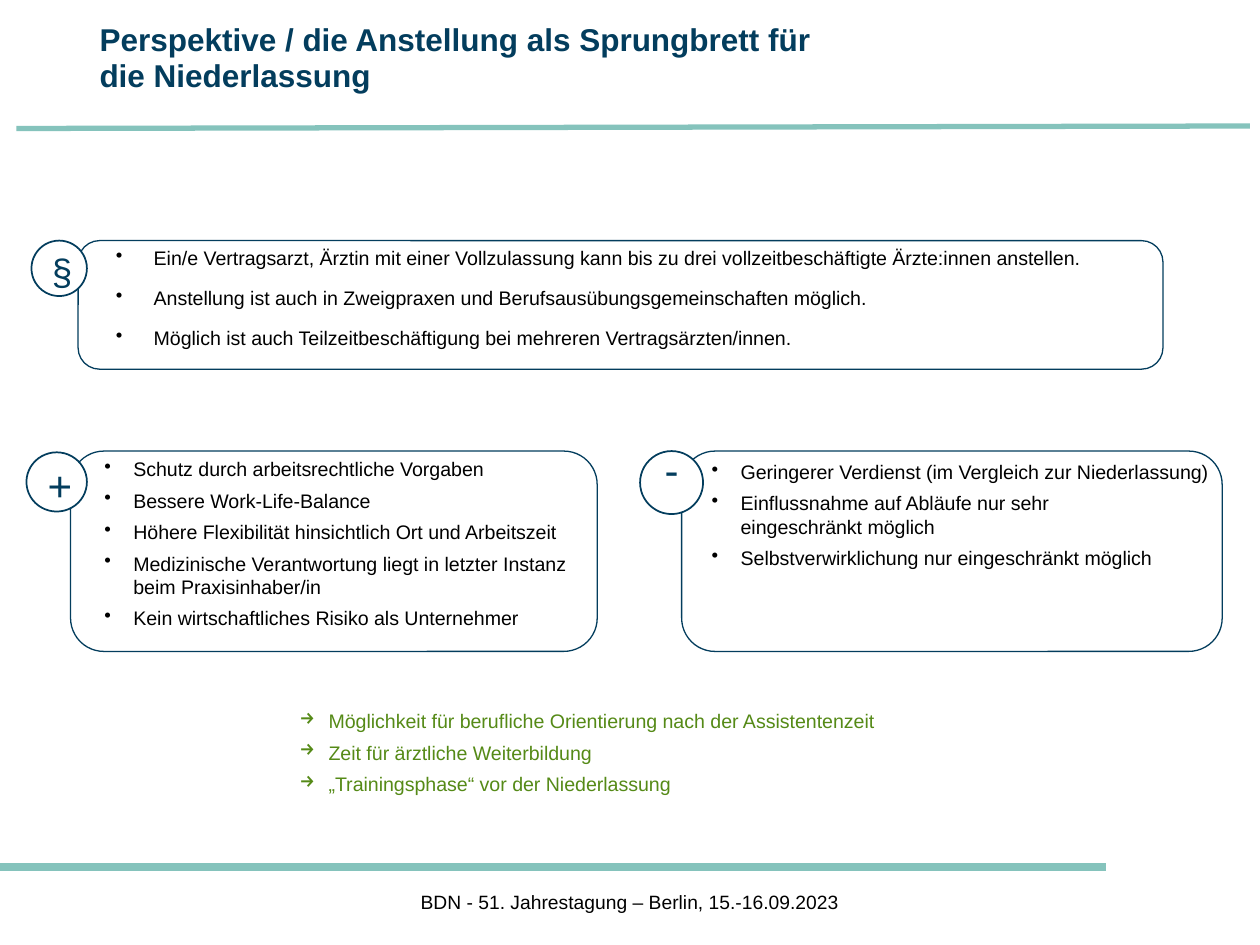
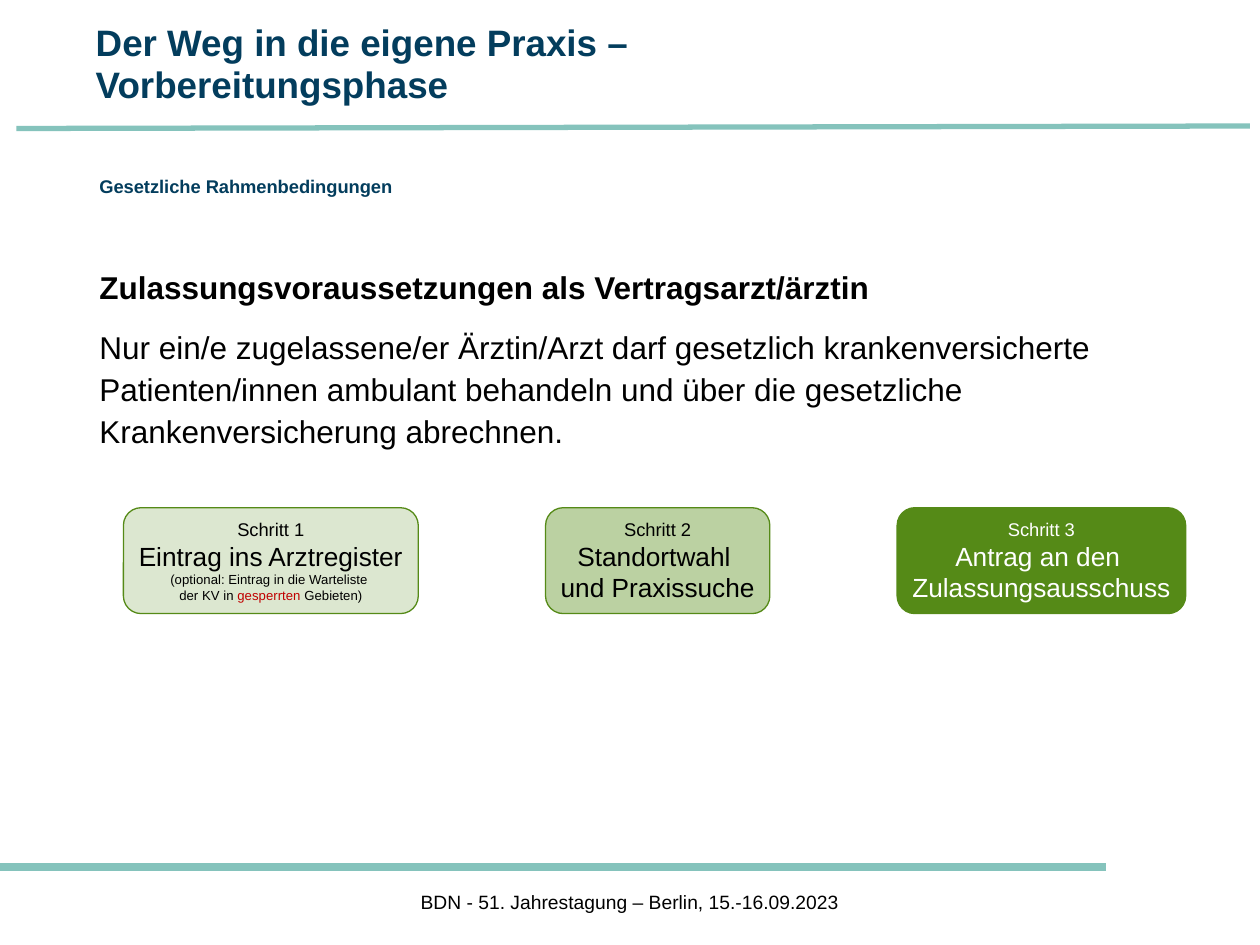
from copy import deepcopy
from dataclasses import dataclass
from typing import NamedTuple

from lxml import etree
from pptx import Presentation, util as u
from pptx.dml.color import RGBColor
from pptx.enum import shapes, text
from pptx.oxml.ns import qn

UNIT = u.Inches(0.1)  # grid of 100 columns by 75 rows
COLS, ROWS = 100, 75
FACE = "Arial"
NAVY, TEAL, GREEN, SAGE = "033D5D", "85C3BC", "558A17", "BBD1A2"
BLACK, WHITE, RED = "000000", "FFFFFF", "C00000"
FOOTER = "BDN - 51. Jahrestagung – Berlin, 15.-16.09.2023"
SMALL = 11.2
KIND = shapes.MSO_SHAPE
MID = text.MSO_ANCHOR.MIDDLE
CENTER = text.PP_ALIGN.CENTER


class Box(NamedTuple):
    """Left, top, width and height in grid units."""
    col: float
    row: float
    cols: float
    rows: float

    def emu(self) -> list[int]:
        return [int(n * UNIT) for n in self]


class Style(NamedTuple):
    size: float
    color: str = BLACK
    bold: bool = False


class Paras(NamedTuple):
    """Paragraph spacing in points, bullet sign and indents in inches."""
    before: float = 0
    after: float = 0
    lines: float = 1.0
    sign: str = ""
    left: float = 0
    hang: float = 0


class Piece(NamedTuple):
    words: str
    style: Style


@dataclass
class Card:
    """An outlined list with a round badge on its corner."""
    frame: Box
    body: Box
    badge: Box
    mark: str
    size: float
    items: list[str]
    paras: Paras
    tight: bool = False
    turn: int = 0


@dataclass
class Step:
    cols: float
    fill: str
    alpha: int
    lines: list[list[Piece]]


LAW = Paras(5, 4.5, sign="•", left=0.59, hang=0.3)
LIST = Paras(4.5, sign="•", left=0.46, hang=0.23)
ARROWS = Paras(4.5, sign="→", left=0.23, hang=0.23)

CARDS = [
    Card(Box(6.2, 19.1, 86.1, 10.2), Box(5.6, 19.1, 87, 11.2),
         Box(2.5, 19.1, 4.4, 4.4), "§", 21, [
        "Ein/e Vertragsarzt, Ärztin mit einer Vollzulassung kann bis zu drei "
        "vollzeitbeschäftigte Ärzte:innen anstellen.",
        "Anstellung ist auch in Zweigpraxen und Berufsausübungsgemeinschaften möglich.",
        "Möglich ist auch Teilzeitbeschäftigung bei mehreren Vertragsärzten/innen.",
    ], LAW, tight=True),
    Card(Box(5.6, 35.8, 41.8, 15.9), Box(5, 35.8, 44.9, 15.4),
         Box(2.1, 35.9, 4.8, 4.7), "+", 24, [
        "Schutz durch arbeitsrechtliche Vorgaben",
        "Bessere Work-Life-Balance",
        "Höhere Flexibilität hinsichtlich Ort und Arbeitszeit",
        "Medizinische Verantwortung liegt in letzter Instanz \nbeim Praxisinhaber/in",
        "Kein wirtschaftliches Risiko als Unternehmer",
    ], LIST),
    Card(Box(54.1, 35.8, 42.9, 15.9), Box(53.2, 36, 44.9, 10.4),
         Box(50.8, 35.8, 5, 5), "-", 24, [
        "Geringerer Verdienst (im Vergleich zur Niederlassung)",
        "Einflussnahme auf Abläufe nur sehr \neingeschränkt möglich",
        "Selbstverwirklichung nur eingeschränkt möglich",
    ], LIST, turn=180),
]

GAINS = [
    "Möglichkeit für berufliche Orientierung nach der Assistentenzeit",
    "Zeit für ärztliche Weiterbildung",
    "„Trainingsphase“ vor der Niederlassung",
]

NOTE = Style(7.5)
HEAD, MAIN = Style(10.5), Style(15)
STEPS = [
    Step(23.4, SAGE, 50, [
        [Piece("Schritt 1", HEAD)],
        [Piece("Eintrag ins Arztregister", MAIN)],
        [Piece("(optional: Eintrag in die Warteliste ", NOTE)],
        [Piece("der KV in ", NOTE), Piece("gesperrten", Style(7.5, RED)),
         Piece(" Gebieten)", NOTE)],
    ]),
    Step(17.8, SAGE, 100, [
        [Piece("Schritt 2", HEAD)],
        [Piece("Standortwahl ", MAIN)],
        [Piece("und Praxissuche", MAIN)],
    ]),
    Step(22.9, GREEN, 100, [
        [Piece("Schritt 3", Style(10.5, WHITE))],
        [Piece("Antrag an den ", Style(15, WHITE))],
        [Piece("Zulassungsausschuss", Style(15, WHITE))],
    ]),
]


def rgb(code: str) -> RGBColor:
    return RGBColor.from_string(code)


def ink(run, style: Style) -> None:
    font = run.font
    font.name, font.size, font.bold = FACE, u.Pt(style.size), style.bold
    font.color.rgb = rgb(style.color)


def match_breaks(para) -> None:
    """Give each line break the size of the run before it."""
    for br in para._p.findall(qn("a:br")):
        br.append(deepcopy(br.getprevious().find(qn("a:rPr"))))


def fit(frame, tight: bool = False) -> None:
    side, top = (0.07, 0.04) if tight else (0.1, 0.05)
    frame.margin_left = frame.margin_right = u.Inches(side)
    frame.margin_top = frame.margin_bottom = u.Inches(top)
    frame.word_wrap = True


def write(frame, items: list[str], styles: list[Style], paras: Paras = Paras()) -> None:
    """Fill a text frame, one paragraph for each item."""
    for i, (item, style) in enumerate(zip(items, styles)):
        para = frame.add_paragraph() if i else frame.paragraphs[0]
        para.text = item
        if paras.sign:
            props = para._p.get_or_add_pPr()
            props.set("marL", str(u.Inches(paras.left)))
            props.set("indent", str(-u.Inches(paras.hang)))
            etree.SubElement(props, qn("a:buChar")).set("char", paras.sign)
        para.space_before = u.Pt(paras.before if i else 0)
        para.space_after = u.Pt(paras.after)
        para.line_spacing = paras.lines
        for run in para.runs:
            ink(run, style)
        match_breaks(para)


def add_text(parent, box: Box, items: list[str], styles: list[Style],
             paras: Paras = Paras(), tight: bool = False) -> None:
    frame = parent.add_textbox(*box.emu()).text_frame
    fit(frame, tight)
    write(frame, items, styles, paras)


def add_form(parent, kind, box: Box, line: str, width: float, fill: str = ""):
    form = parent.add_shape(kind, *box.emu())
    form.shadow.inherit = False
    form.line.color.rgb, form.line.width = rgb(line), u.Pt(width)
    if fill:
        form.fill.solid()
        form.fill.fore_color.rgb = rgb(fill)
    else:
        form.fill.background()
    return form


def add_label(form, label: str, style: Style, lines: float = 1.0) -> None:
    frame = form.text_frame
    fit(frame)
    frame.vertical_anchor = MID
    write(frame, [label], [style], Paras(lines=lines))
    frame.paragraphs[0].alignment = CENTER


def add_rule(slide, ends: Box, width: float) -> None:
    """Draw a line; the box holds start and end points."""
    rule = slide.shapes.add_connector(shapes.MSO_CONNECTOR.STRAIGHT, *ends.emu())
    rule.line.color.rgb, rule.line.width = rgb(TEAL), u.Pt(width)
    etree.SubElement(rule._element.spPr, qn("a:effectLst"))


def add_page(deck, title: str, box: Box, size: float):
    """Add a slide with title, both rules and footer."""
    slide = deck.slides.add_slide(deck.slide_layouts[5])
    add_rule(slide, Box(0, 68.8, 87.8, 68.8), 4.5)
    foot = add_form(slide.shapes, KIND.RECTANGLE, Box(0, 70.2, COLS, 2.8), WHITE, 0.75)
    add_label(foot, FOOTER, Style(11))
    add_rule(slide, Box(1.3, 10.2, 99.2, 10), 3)
    head = slide.shapes.title
    head.left, head.top, head.width, head.height = box.emu()
    frame = head.text_frame
    fit(frame)
    frame.auto_size = text.MSO_AUTO_SIZE.NONE
    frame.vertical_anchor = text.MSO_ANCHOR.TOP
    write(frame, [title], [Style(size, NAVY, True)], Paras(lines=0.95))
    frame.paragraphs[0].alignment = text.PP_ALIGN.LEFT
    return slide


def add_card(slide, card: Card) -> None:
    group = slide.shapes.add_group_shape().shapes
    add_form(group, KIND.ROUNDED_RECTANGLE, card.frame, NAVY, 0.75)
    add_text(group, card.body, card.items, [Style(SMALL)] * len(card.items),
             card.paras, card.tight)
    badge = add_form(group, KIND.OVAL, card.badge, NAVY, 1, WHITE)
    badge.rotation = card.turn
    add_label(badge, card.mark, Style(card.size, NAVY), 1.1)


def add_step(slide, step: Step, col: float) -> None:
    form = add_form(slide.shapes, KIND.ROUNDED_RECTANGLE,
                    Box(col, 40.3, step.cols, 8.4), GREEN, 0.75, step.fill)
    if step.alpha < 100:
        tone = form._element.spPr.find(qn("a:solidFill")).find(qn("a:srgbClr"))
        etree.SubElement(tone, qn("a:alpha")).set("val", str(step.alpha * 1000))
    frame = form.text_frame
    fit(frame, tight=True)
    frame.word_wrap = False
    frame.vertical_anchor = MID
    para = frame.paragraphs[0]
    para.alignment = CENTER
    for i, line in enumerate(step.lines):
        if i:
            para.add_line_break()
        for piece in line:
            run = para.add_run()
            run.text = piece.words
            ink(run, piece.style)
    match_breaks(para)


def add_outlook(deck) -> None:
    slide = add_page(deck, "Perspektive / die Anstellung als Sprungbrett für die Niederlassung",
                     Box(6.9, 1.3, 59.6, 7.5), 18)
    for card in CARDS:
        add_card(slide, card)
    add_text(slide.shapes, Box(22.8, 55.8, 52, 8.1), GAINS,
             [Style(SMALL, GREEN)] * len(GAINS), ARROWS)


def add_path(deck) -> None:
    slide = add_page(deck, "Der Weg in die eigene Praxis – Vorbereitungsphase",
                     Box(6.6, 1.3, 60, 7.9), 21)
    add_text(slide.shapes, Box(6.9, 20.5, 89.8, 46.2), [
        "Zulassungsvoraussetzungen als Vertragsarzt/ärztin",
        "Nur ein/e zugelassene/er Ärztin/Arzt darf gesetzlich krankenversicherte "
        "Patienten/innen ambulant behandeln und über die gesetzliche "
        "Krankenversicherung abrechnen.",
    ], [Style(18, bold=True), Style(18)], Paras(3.8, 6.8, 1.1))
    add_text(slide.shapes, Box(6.9, 13.4, 89.8, 2.9),
             ["Gesetzliche Rahmenbedingungen"], [Style(10.5, NAVY, True)])
    col, gap = 9.8, 10.1
    for step in STEPS:
        add_step(slide, step, col)
        col += step.cols + gap


def main() -> None:
    deck = Presentation()
    deck.slide_width, deck.slide_height = COLS * UNIT, ROWS * UNIT
    add_outlook(deck)
    add_path(deck)
    deck.save("out.pptx")


if __name__ == "__main__":
    main()
